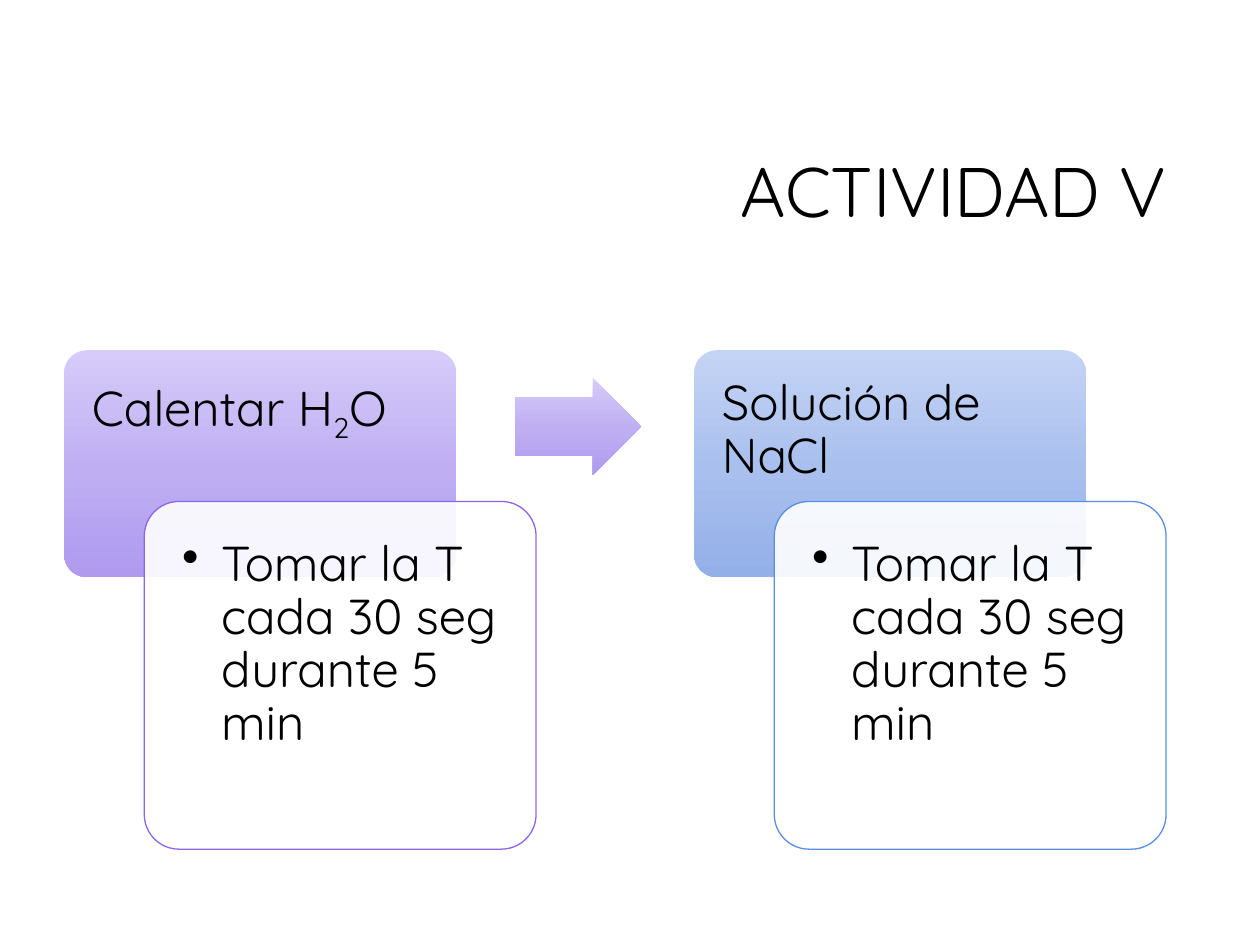
from copy import deepcopy

from pptx import Presentation
from pptx import util as u
from pptx.dml.color import RGBColor
from pptx.enum import shapes, text
from pptx.oxml import ns
from lxml import etree

PURPLE = ("D6CBF9", "BFAFF2", "AF9AEF")
BLUE = ("C4D4F5", "A9BFED", "94B0E9")
STEP_TEXT = "Tomar la T cada 30 seg durante 5 min"
STEPS = [
    ([("Calentar H", 0), ("2", -25), ("O", 0)], PURPLE, "8D65EA"),
    ([("Solución de NaCl", 0)], BLUE, "588FE2"),
]


def color(value):
    return RGBColor.from_string(value)


def add_element(parent, tag, **attributes):
    return etree.SubElement(parent, ns.qn(tag), attributes)


class SlideBuilder:
    font_name = "Quicksand"
    text_color = "000000"

    def __init__(self, slide):
        self.slide = slide

    def shape(self, preset, box, adjustments):
        shape = self.slide.shapes.add_shape(preset, *map(u.Inches, box))
        shape.shadow.inherit = False
        for index, value in enumerate(adjustments):
            shape.adjustments[index] = value
        return shape

    def gradient_shape(self, preset, box, adjustments, colors):
        """Add a borderless shape with a three-stop gradient from top to bottom."""
        shape = self.shape(preset, box, adjustments)
        shape.line.fill.background()
        shape.fill.gradient()
        shape.fill.gradient_angle = 270
        stop_list = shape.fill._fill._gradFill.gsLst
        stop_list.insert(1, deepcopy(stop_list[0]))
        for stop, position, value in zip(shape.fill.gradient_stops, (0, 0.52, 1), colors):
            stop.position = position
            stop.color.rgb = color(value)

    def outlined_card(self, box, line_color):
        """Add a rounded card in white at 90% opacity."""
        shape = self.shape(shapes.MSO_SHAPE.ROUNDED_RECTANGLE, box, [0.1])
        shape.fill.solid()
        shape.fill.fore_color.rgb = color("FFFFFF")
        white = shape._element.spPr.find(ns.qn("a:solidFill"))[0]
        add_element(white, "a:alpha", val="90000")
        shape.line.color.rgb = color(line_color)
        shape.line.width = u.Pt(0.75)

    def text(self, box, runs, size, margins, anchor=text.MSO_ANCHOR.TOP,
             align=text.PP_ALIGN.LEFT, bullet=False):
        frame = self.slide.shapes.add_textbox(*map(u.Inches, box)).text_frame
        frame.word_wrap = True
        frame.vertical_anchor = anchor
        (frame.margin_left, frame.margin_top,
         frame.margin_right, frame.margin_bottom) = map(u.Inches, margins)
        paragraph = frame.paragraphs[0]
        paragraph.alignment = align
        paragraph.line_spacing = 0.9
        if bullet:
            paragraph.level = 1
            properties = paragraph._p.get_or_add_pPr()
            indent = u.Inches(0.31)
            properties.set("marL", str(indent))
            properties.set("indent", str(-indent))
            add_element(properties, "a:buChar", char="•")
        for content, baseline in runs:
            run = paragraph.add_run()
            run.text = content
            run.font.name = self.font_name
            run.font.size = u.Pt(size)
            run.font.color.rgb = color(self.text_color)
            if baseline:
                run.font._element.set("baseline", str(baseline * 1000))


def main():
    presentation = Presentation()
    presentation.slide_width = u.Inches(10)
    presentation.slide_height = u.Inches(7.5)
    builder = SlideBuilder(presentation.slides.add_slide(presentation.slide_layouts[6]))

    builder.text((2.38, 0.84, 6.97, 1.41), [("ACTIVIDAD V", 0)], 40,
                 (0.1, 0.05, 0.1, 0.05), text.MSO_ANCHOR.MIDDLE, text.PP_ALIGN.RIGHT)

    for index, (heading, colors, line_color) in enumerate(STEPS):
        left = 0.51 + 5 * index
        card_left = left + 0.635
        builder.gradient_shape(shapes.MSO_SHAPE.ROUNDED_RECTANGLE,
                               (left, 2.78, 3.11, 1.8), [0.1], colors)
        builder.text((left, 2.78, 3.11, 1.2), heading, 28, (0.22, 0.22, 0.22, 0.12))
        builder.outlined_card((card_left, 3.98, 3.11, 2.76), line_color)
        builder.text((card_left + 0.08, 4.06, 2.95, 2.59), [(STEP_TEXT, 0)], 28,
                     (0.22, 0.22, 0.22, 0.22), bullet=True)

    builder.gradient_shape(shapes.MSO_SHAPE.RIGHT_ARROW, (4.09, 3, 1, 0.77),
                           [0.6, 0.5], PURPLE)

    presentation.save("out.pptx")


if __name__ == "__main__":
    main()
